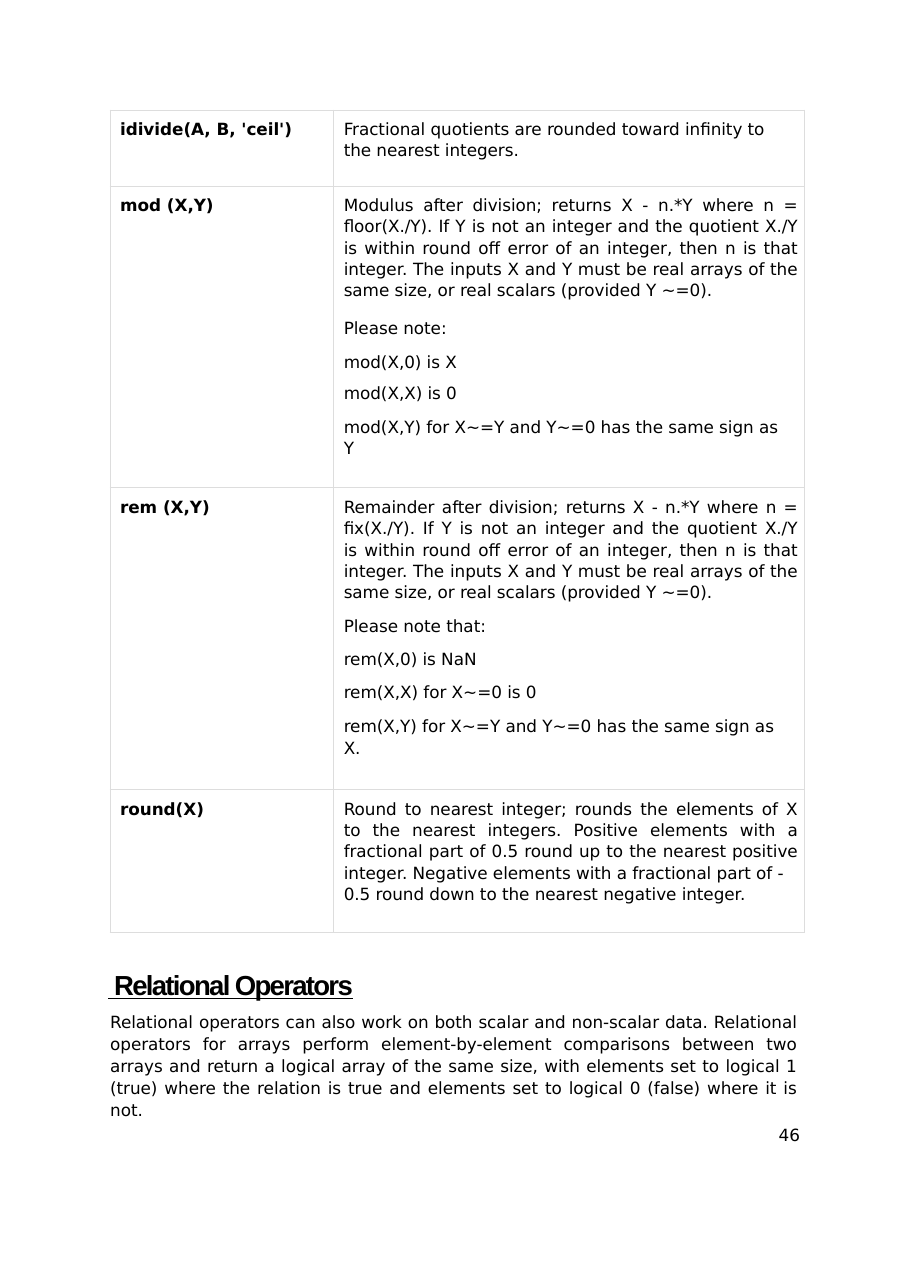
import pptx
import pptx.dml.color
import pptx.enum.text
import pptx.oxml
import pptx.oxml.ns
import pptx.util

Pt = pptx.util.Pt
ALIGN = pptx.enum.text.PP_ALIGN
BODY_FONT = {"name": "DejaVu Sans", "size": Pt(11), "bold": False}
LABEL_FONT = {**BODY_FONT, "bold": True}
HEADING_FONT = {"name": "Arial", "size": Pt(18), "bold": True, "underline": True}
TIGHT = -0.05

JUSTIFIED = {"alignment": ALIGN.JUSTIFY, "line_spacing": 1.09}
NOTE_START = {"line_spacing": Pt(22.4), "space_before": Pt(2.2)}
NOTE_NEXT = {"line_spacing": Pt(22.4)}
NOTE_CLOSE = {"space_before": Pt(7)}
NOTE_WIDE = {"line_spacing": 1.7}
NOTE_SIGN = {"line_spacing": 1.08, "space_before": Pt(8.3)}

FUNCTIONS = [
    ("idivide(A, B, 'ceil')", [
        ("Fractional quotients are rounded toward infinity to\vthe nearest integers.",
         {"line_spacing": 1.08}),
    ]),
    ("mod (X,Y)", [
        ("Modulus after division; returns X - n.*Y where n = floor(X./Y). If Y is not an "
         "integer and the quotient X./Y is within round off error of an integer, then n is "
         "that integer. The inputs X and Y must be real arrays of the same size, or real "
         "scalars (provided Y ~=0).", JUSTIFIED),
        ("Please note:", NOTE_START),
        ("mod(X,0) is X", NOTE_NEXT),
        ("mod(X,X) is 0", NOTE_CLOSE),
        ("mod(X,Y) for X~=Y and Y~=0 has the same sign as\vY", NOTE_SIGN),
    ]),
    ("rem (X,Y)", [
        ("Remainder after division; returns X - n.*Y where n = fix(X./Y). If Y is not an "
         "integer and the quotient X./Y\vis within round off error of an integer, then n is "
         "that integer. The inputs X and Y must be real arrays of the same size, or real "
         "scalars (provided Y ~=0).", JUSTIFIED),
        ("Please note that:", NOTE_WIDE),
        ("rem(X,0) is NaN", NOTE_WIDE),
        ("rem(X,X) for X~=0 is 0", NOTE_WIDE),
        ("rem(X,Y) for X~=Y and Y~=0 has the same sign as\vX.", NOTE_SIGN),
    ]),
    ("round(X)", [
        ("Round to nearest integer; rounds the elements of X\vto the nearest integers. "
         "Positive elements with a fractional part of 0.5 round up to the nearest positive "
         "integer. Negative elements with a fractional part of -", JUSTIFIED),
        ("0.5 round down to the nearest negative integer.", {"space_before": Pt(1.1)}),
    ]),
]
ROW_HEIGHTS = [49.6, 197.3, 197.3, 92.9]
COLUMN_WIDTHS = [146.2, 307.8]


def color(hex_value):
    return pptx.dml.color.RGBColor.from_string(hex_value)


def apply(target, values):
    for name, value in values.items():
        setattr(target, name, value)


def write(frame, paragraphs, font, spacing=TIGHT):
    """Fill a text frame with (text, paragraph format) pairs; spacing is between letters."""
    for index, (text, layout) in enumerate(paragraphs):
        paragraph = frame.paragraphs[0] if index == 0 else frame.add_paragraph()
        paragraph.text = text
        properties = paragraph._p.get_or_add_pPr()
        properties.set("marL", "0")
        properties.set("indent", "0")
        apply(paragraph, {"alignment": ALIGN.LEFT, "line_spacing": 1.0,
                          "space_before": Pt(0), "space_after": Pt(0), **layout})
        properties.append(pptx.oxml.parse_xml(
            f"<a:buNone {pptx.oxml.ns.nsdecls('a')}/>"))
        for run in paragraph.runs:
            apply(run.font, font)
            run.font.color.rgb = color("000000")
            run._r.get_or_add_rPr().set("spc", str(round(spacing * 100)))


def place(shape, left, top, width, height):
    apply(shape, {"left": Pt(left), "top": Pt(top),
                  "width": Pt(width), "height": Pt(height)})
    frame = shape.text_frame
    apply(frame, {"word_wrap": True, "auto_size": pptx.enum.text.MSO_AUTO_SIZE.NONE,
                  "vertical_anchor": pptx.enum.text.MSO_ANCHOR.TOP,
                  "margin_left": 0, "margin_top": 0, "margin_right": 0, "margin_bottom": 0})
    return frame


def outline(cell, hex_value, width):
    for side in ("lnL", "lnR", "lnT", "lnB"):
        cell._tc.get_or_add_tcPr().append(pptx.oxml.parse_xml(
            f"<a:{side} {pptx.oxml.ns.nsdecls('a')} w=\"{Pt(width)}\"><a:solidFill>"
            f"<a:srgbClr val=\"{hex_value}\"/></a:solidFill></a:{side}>"))


def add_function_table(slide, left, top):
    table = slide.shapes.add_table(
        len(FUNCTIONS), len(COLUMN_WIDTHS), Pt(left), Pt(top),
        Pt(sum(COLUMN_WIDTHS)), Pt(sum(ROW_HEIGHTS))).table
    apply(table, {"first_row": False, "horz_banding": False})
    for column, width in zip(table.columns, COLUMN_WIDTHS):
        column.width = Pt(width)
    for row, height, (label, description) in zip(table.rows, ROW_HEIGHTS, FUNCTIONS):
        row.height = Pt(height)
        contents = [([(label, {})], LABEL_FONT, 6.4), (description, BODY_FONT, 5.2)]
        for cell, (paragraphs, font, margin_top) in zip(row.cells, contents):
            apply(cell, {"margin_left": Pt(6.5), "margin_top": Pt(margin_top),
                         "margin_right": Pt(4.5), "margin_bottom": 0})
            outline(cell, "DDDDDD", 0.75)
            cell.fill.background()
            write(cell.text_frame, paragraphs, font)


def add_operators_section(slide, left, top, width):
    heading, explanation = slide.placeholders
    write(place(heading, left - 1.3, top, width, 24),
          [(" Relational Operators", {})], HEADING_FONT, -1.1)
    write(place(explanation, left, top + 27.6, width, 74), [
        ("Relational operators can also work on both scalar and non-scalar data. Relational "
         "operators for arrays perform element-by-element comparisons between two arrays and "
         "return a logical array of the same size, with elements set to logical 1 (true) where "
         "the relation is true and elements set to logical 0 (false) where it is not.",
         JUSTIFIED)], BODY_FONT)


def add_page_number(slide, right, top):
    number = slide.shapes.add_textbox(0, 0, 0, 0)
    write(place(number, right - 25, top, 25, 15),
          [("46", {"alignment": ALIGN.RIGHT})], BODY_FONT, 0)


def main():
    presentation = pptx.Presentation()
    apply(presentation, {"slide_width": Pt(594.72), "slide_height": Pt(841.68)})
    slide = presentation.slides.add_slide(presentation.slide_layouts[1])
    add_function_table(slide, 72, 72)
    add_operators_section(slide, 72, 632.4, 449)
    add_page_number(slide, 523, 734.8)
    presentation.save("out.pptx")


if __name__ == "__main__":
    main()
